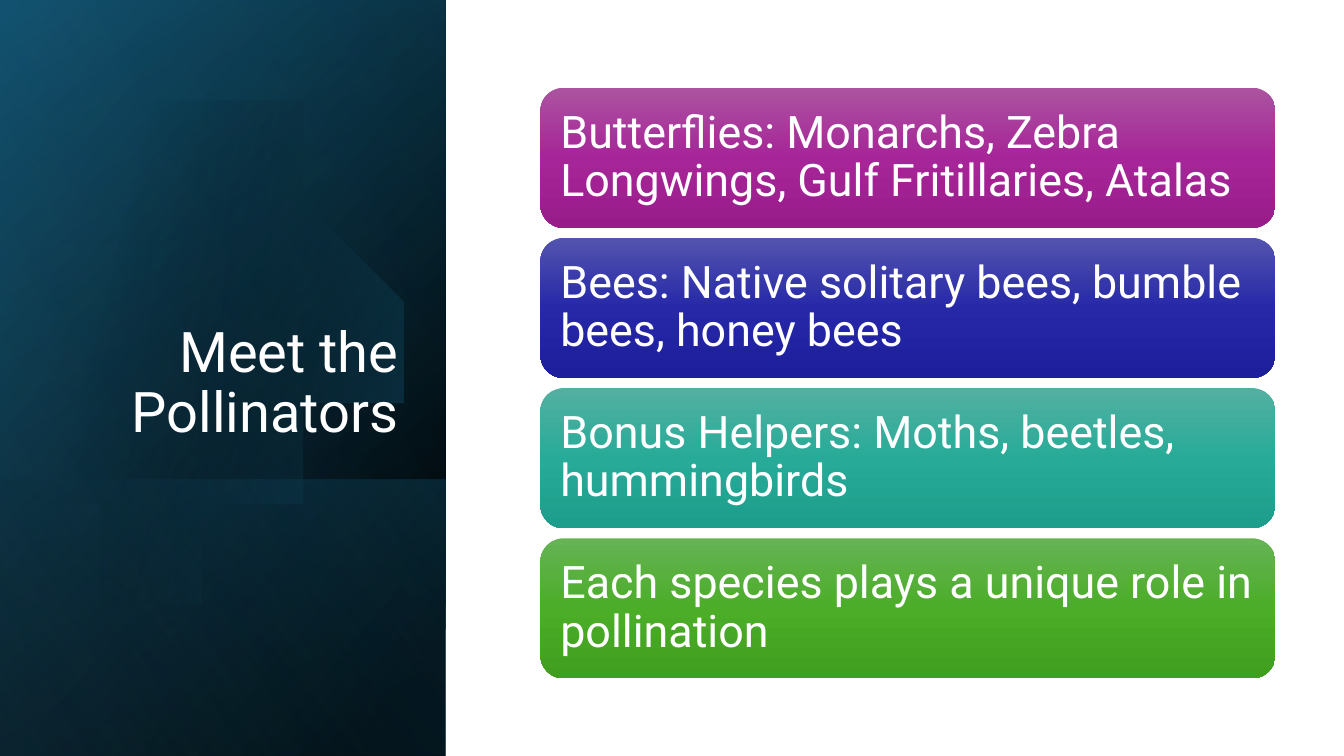
from dataclasses import dataclass

from lxml.etree import SubElement
from pptx import Presentation
from pptx.dml.color import RGBColor
from pptx.enum.shapes import MSO_SHAPE
from pptx.enum.text import MSO_ANCHOR, PP_ALIGN
from pptx.oxml.ns import qn
from pptx.util import Inches, Pt

FONT = "Roboto"
WHITE = RGBColor(0xFF, 0xFF, 0xFF)
BLACK = RGBColor(0x00, 0x00, 0x00)
NAVY = RGBColor(0x10, 0x48, 0x62)
BLUE = RGBColor(0x15, 0x60, 0x82)
SKY = RGBColor(0x46, 0xB1, 0xE1)
PLUM = (RGBColor(0xAC, 0x53, 0xA0), RGBColor(0xA6, 0x25, 0x98), RGBColor(0x99, 0x1C, 0x8B))
INK = (RGBColor(0x53, 0x54, 0xAE), RGBColor(0x26, 0x28, 0xA8), RGBColor(0x1D, 0x1E, 0x9B))
TEAL = (RGBColor(0x53, 0xB0, 0xA1), RGBColor(0x27, 0xAB, 0x98), RGBColor(0x1D, 0x9D, 0x8B))
GREEN = (RGBColor(0x66, 0xB3, 0x54), RGBColor(0x4B, 0xAD, 0x28), RGBColor(0x40, 0x9F, 0x1E))

SIDE = 4.42
TALL = 7.5
CARD_LEFT, CARD_TOP = 5.36, 0.87
CARD_WIDE, CARD_HIGH, CARD_GAP = 7.29, 1.39, 0.1


@dataclass
class Stop:
    place: int
    color: RGBColor
    alpha: int = 100


@dataclass
class Layer:
    top: float
    high: float
    angle: int
    stops: list[Stop]


@dataclass
class Card:
    text: str
    tones: tuple[RGBColor, ...]


BACK = [
    Layer(0, TALL, 50, [Stop(8, BLACK), Stop(100, NAVY)]),
    Layer(0, TALL, 30, [Stop(0, BLACK, 0), Stop(99, BLUE, 46)]),
    Layer(4.76, 2.74, 130, [Stop(2, BLUE, 29), Stop(100, BLACK, 30)]),
]
GLOW = [Stop(29, BLACK, 0), Stop(100, BLUE, 43)]
SHEEN = Layer(0, TALL, 120, [Stop(0, BLACK, 0), Stop(99, SKY, 11)])

DISC_START = (1.49, 1.1)
DISC = [
    [(2.46, 1.12), (3.35, 1.77), (3.63, 2.75)],
    [(3.98, 3.97), (3.28, 5.23), (2.07, 5.58)],
    [(1.31, 5.8), (0.53, 5.61), (-0.03, 5.14)],
    [(-0.15, 5.03)],
    [(-0.15, 1.75)],
    [(0, 1.61)],
    [(0.23, 1.42), (0.5, 1.28), (0.8, 1.19)],
    [(1.03, 1.13), (1.26, 1.1), (1.49, 1.1)],
]

CARDS = [
    Card("Butterflies: Monarchs, Zebra Longwings, Gulf Fritillaries, Atalas", PLUM),
    Card("Bees: Native solitary bees, bumble bees, honey bees", INK),
    Card("Bonus Helpers: Moths, beetles, hummingbirds", TEAL),
    Card("Each species plays a unique role in pollination", GREEN),
]


def shade(shape, stops: list[Stop], angle: int) -> None:
    shape.shadow.inherit = False
    shape.line.fill.background()
    shape.fill.background()
    props = shape._element.spPr
    grad = SubElement(props, qn("a:gradFill"), rotWithShape="1")
    props.replace(props.find(qn("a:noFill")), grad)
    items = SubElement(grad, qn("a:gsLst"))
    for stop in stops:
        item = SubElement(items, qn("a:gs"), pos=str(stop.place * 1000))
        color = SubElement(item, qn("a:srgbClr"), val=str(stop.color))
        if stop.alpha < 100:
            SubElement(color, qn("a:alpha"), val=str(stop.alpha * 1000))
    SubElement(grad, qn("a:lin"), ang=str(angle * 60000), scaled="0")


def write(shape, text: str, *, size: int, align=PP_ALIGN.LEFT,
          anchor=MSO_ANCHOR.MIDDLE, inset: tuple[float, float] = (0.1, 0.05)) -> None:
    frame = shape.text_frame
    frame.word_wrap = True
    frame.vertical_anchor = anchor
    frame.margin_left = frame.margin_right = Inches(inset[0])
    frame.margin_top = frame.margin_bottom = Inches(inset[1])
    para = frame.paragraphs[0]
    para.alignment = align
    para.line_spacing = 0.9
    run = para.add_run()
    run.text = text
    run.font.name = FONT
    run.font.size = Pt(size)
    run.font.color.rgb = WHITE


def add_layer(slide, layer: Layer) -> None:
    left = (SIDE - layer.high) / 2
    top = layer.top + (layer.high - SIDE) / 2
    shape = slide.shapes.add_shape(MSO_SHAPE.RECTANGLE, Inches(left), Inches(top),
                                   Inches(layer.high), Inches(SIDE))
    shape.rotation = 90
    shape._element.spPr.xfrm.set("flipH", "1")
    shade(shape, layer.stops, layer.angle)


def curve(start: tuple, ends: list[tuple], steps: int = 24) -> list[tuple]:
    if len(ends) == 1:
        return ends
    knots = [start, *ends]
    points = []
    for step in range(1, steps + 1):
        t = step / steps
        parts = ((1 - t) ** 3, 3 * t * (1 - t) ** 2, 3 * t * t * (1 - t), t ** 3)
        points.append(tuple(sum(p * k[axis] for p, k in zip(parts, knots))
                            for axis in (0, 1)))
    return points


def add_disc(slide) -> None:
    points = [DISC_START]
    for ends in DISC:
        points += curve(points[-1], ends)
    pen = slide.shapes.build_freeform(*DISC_START, scale=Inches(1))
    pen.add_line_segments(points[1:], close=True)
    shade(pen.convert_to_shape(), GLOW, 14)


def add_card(slide, card: Card, index: int) -> None:
    top = CARD_TOP + index * (CARD_HIGH + CARD_GAP)
    shape = slide.shapes.add_shape(MSO_SHAPE.ROUNDED_RECTANGLE, Inches(CARD_LEFT),
                                   Inches(top), Inches(CARD_WIDE), Inches(CARD_HIGH))
    shade(shape, [Stop(i * 50, tone) for i, tone in enumerate(card.tones)], 90)
    write(shape, card.text, size=32, inset=(0.13, 0.13))


def main() -> None:
    deck = Presentation()
    deck.slide_width, deck.slide_height = Inches(13.33), Inches(TALL)
    slide = deck.slides.add_slide(deck.slide_layouts[6])
    for layer in BACK:
        add_layer(slide, layer)
    add_disc(slide)
    add_layer(slide, SHEEN)
    title = slide.shapes.add_textbox(Inches(0.64), Inches(1.84), Inches(3.41), Inches(2.62))
    write(title, "Meet the Pollinators", size=40, align=PP_ALIGN.RIGHT,
          anchor=MSO_ANCHOR.BOTTOM)
    for index, card in enumerate(CARDS):
        add_card(slide, card, index)
    deck.save("out.pptx")


if __name__ == "__main__":
    main()
